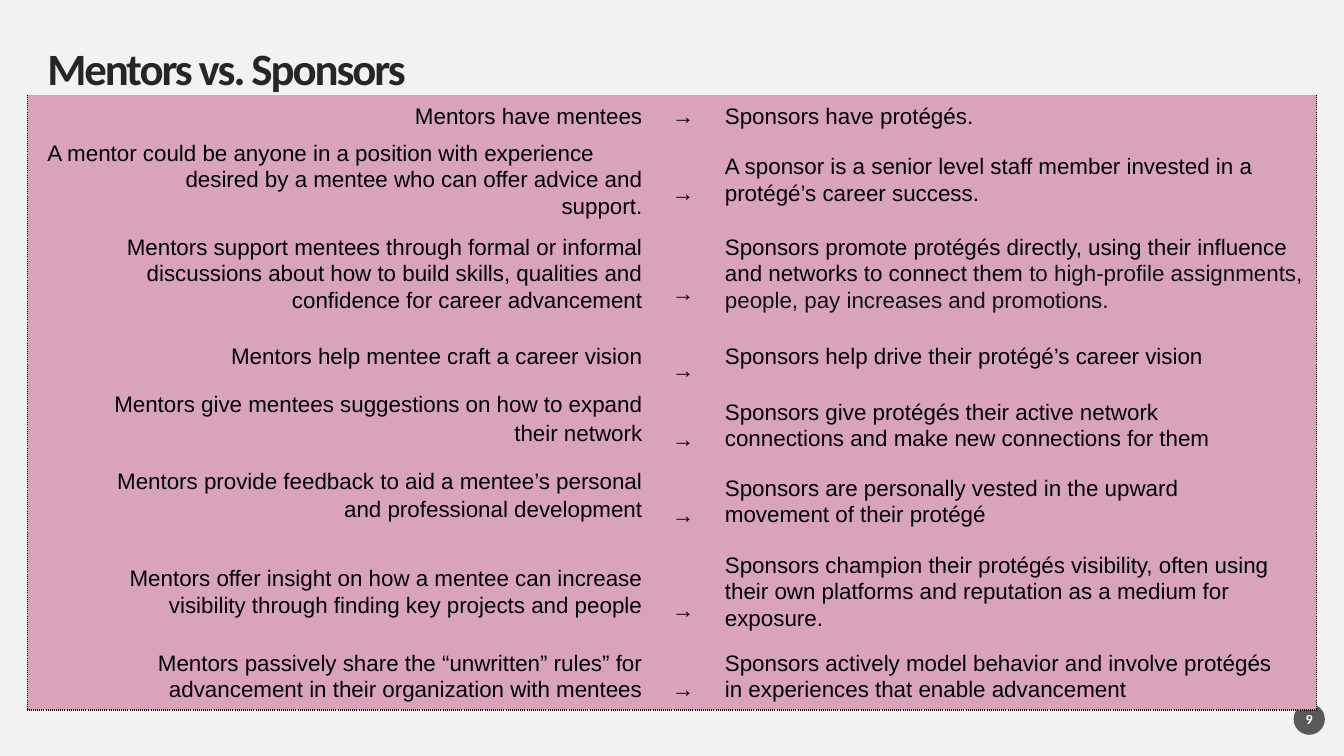
from dataclasses import dataclass

from lxml.etree import SubElement as Sub
from pptx import Presentation
from pptx.dml.color import RGBColor as Rgb
from pptx.enum.shapes import MSO_SHAPE as Shape
from pptx.enum.text import MSO_ANCHOR as Anchor, PP_ALIGN as Align
from pptx.oxml.ns import qn
from pptx.util import Inches, Pt


@dataclass(frozen=True)
class Theme:
    back: str = "F2F2F2"
    pink: str = "D9A4BB"
    ink: str = "000000"
    soft: str = "111111"
    head: str = "262626"
    badge: str = "595959"
    white: str = "FFFFFF"
    title: float = 32
    body: float = 16
    small: float = 10
    head_font: str = "Calibri"
    body_font: str = "Arial"


@dataclass(frozen=True)
class Run:
    text: str
    color: str = Theme.ink
    size: float = Theme.body
    font: str = Theme.body_font
    bold: bool = False
    track: float = 0


@dataclass(frozen=True)
class Para:
    runs: tuple[Run, ...]
    align: Align = Align.LEFT
    line: float | Pt = 1.07
    before: float = 0
    indent: float = 0


@dataclass(frozen=True)
class Pair:
    """One row: mentor text, sponsor text, and the insets that set the wraps."""
    height: float
    mentor: tuple[Para, ...]
    sponsor: tuple[Run, ...]
    drop: float = 0.27
    left: float = 0.6
    right: float = 0


THEME = Theme()
COLS = (6.18, 0.65, 5.96)
TIGHT = 10.3


def mentor(text: str, indent: float = 0) -> Para:
    return Para((Run(text),), Align.RIGHT, indent=indent)


def split(first: str, last: str) -> tuple[Para, ...]:
    """Two lines with exact spacing, one empty line height apart."""
    return (Para((Run(first),), Align.RIGHT, Pt(TIGHT)),
            Para((Run(last),), Align.RIGHT, Pt(TIGHT), TIGHT))


PAIRS = (
    Pair(0.41, (mentor("Mentors have mentees"),),
         (Run("Sponsors have protégés."),), drop=0),
    Pair(0.66, (
        Para((Run("A mentor could be anyone in a position with experience"),)),
        mentor("desired by a mentee who can offer advice and support.", 1)),
        (Run("A sponsor is a senior level staff member invested in a "
             "protégé’s career success."),), left=0.2),
    Pair(1.01, (mentor("Mentors support mentees through formal or informal "
                       "discussions about how to build skills, qualities and "
                       "confidence for career advancement"),),
         (Run("Sponsors promote protégés directly, using their influence and "
              "networks to connect them "),
          Run("to high-profile assignments, people, pay increases and "
              "promotions.", THEME.soft)), drop=0.39),
    Pair(0.64, (mentor("Mentors help mentee craft a career vision"),),
         (Run("Sponsors help drive their protégé’s career vision"),)),
    Pair(0.72, split("Mentors give mentees suggestions on how to expand",
                     "their network"),
         (Run("Sponsors give protégés their active network connections and "
              "make new connections for them"),), right=0.5),
    Pair(0.79, split("Mentors provide feedback to aid a mentee’s personal",
                     "and professional development"),
         (Run("Sponsors are personally vested in the upward movement of "
              "their protégé"),), right=0.5),
    Pair(1, (mentor("Mentors offer insight on how a mentee can increase "
                    "visibility through finding key projects and people"),),
         (Run("Sponsors champion their protégés visibility, often using "
              "their own platforms and reputation as a medium for "
              "exposure."),), drop=0.38),
    Pair(0.68, (mentor("Mentors passively share the “unwritten” rules” for "
                       "advancement in their organization with mentees"),),
         (Run("Sponsors actively model behavior and involve protégés in "
              "experiences that enable advancement"),), right=0.36),
)


def write(frame, paras: tuple[Para, ...]) -> None:
    for i, para in enumerate(paras):
        p = frame.add_paragraph() if i else frame.paragraphs[0]
        p.alignment, p.line_spacing = para.align, para.line
        if para.before:
            p.space_before = Pt(para.before)
        if para.indent:
            p._p.get_or_add_pPr().set("marL", str(Inches(para.indent)))
        for run in para.runs:
            r = p.add_run()
            r.text = run.text
            font = r.font
            font.size, font.name, font.bold = Pt(run.size), run.font, run.bold
            font.color.rgb = Rgb.from_string(run.color)
            if run.track:
                r._r.get_or_add_rPr().set("spc", str(int(run.track * 100)))


def label(shape, para: Para) -> None:
    """Fill a shape with one centred-in-height paragraph and no insets."""
    frame = shape.text_frame
    frame.word_wrap = True
    frame.vertical_anchor = Anchor.MIDDLE
    frame.margin_left = frame.margin_right = 0
    frame.margin_top = frame.margin_bottom = 0
    write(frame, (para,))


def edge(cell, sides: str) -> None:
    """Draw dotted borders on the named sides (L, R, T, B)."""
    props = cell._tc.get_or_add_tcPr()
    for side in sides:
        line = Sub(props, qn(f"a:ln{side}"), w=str(Pt(1)))
        fill = Sub(line, qn("a:solidFill"))
        Sub(fill, qn("a:srgbClr"), val=THEME.ink)
        Sub(line, qn("a:prstDash"), val="dot")


def fill_cell(cell, paras: tuple[Para, ...], sides: str,
              left: float = 0, right: float = 0, top: float = 0) -> None:
    edge(cell, sides)
    cell.fill.solid()
    cell.fill.fore_color.rgb = Rgb.from_string(THEME.pink)
    cell.vertical_anchor = Anchor.MIDDLE
    cell.margin_left, cell.margin_right = Inches(left), Inches(right)
    cell.margin_top, cell.margin_bottom = Inches(top), 0
    write(cell.text_frame, paras)


def add_pairs(slide) -> None:
    high = sum(pair.height for pair in PAIRS)
    table = slide.shapes.add_table(
        len(PAIRS), len(COLS), Inches(0.27), Inches(0.94),
        Inches(sum(COLS)), Inches(high)).table
    table.first_row = table.horz_banding = False
    style = table._tbl.tblPr.find(qn("a:tableStyleId"))
    style.text = "{2D5ABB26-0587-4C30-8999-92F81FD0307C}"
    for col, wide in zip(table.columns, COLS):
        col.width = Inches(wide)
    arrow = Para((Run("→"),), Align.CENTER)
    for i, pair in enumerate(PAIRS):
        table.rows[i].height = Inches(pair.height)
        base = "B" if i == len(PAIRS) - 1 else ""
        fill_cell(table.cell(i, 0), pair.mentor, "L" + base,
                  left=pair.left, right=0.08)
        fill_cell(table.cell(i, 1), (arrow,), base, top=pair.drop)
        fill_cell(table.cell(i, 2), (Para(pair.sponsor),), "R" + base,
                  left=0.09, right=pair.right)


def main() -> None:
    deck = Presentation()
    deck.slide_width, deck.slide_height = Inches(13.33), Inches(7.5)
    slide = deck.slides.add_slide(deck.slide_layouts[6])
    slide.background.fill.solid()
    slide.background.fill.fore_color.rgb = Rgb.from_string(THEME.back)

    title = slide.shapes.add_textbox(
        Inches(0.47), Inches(0.47), Inches(12.39), Inches(0.47))
    label(title, Para((Run("Mentors vs. Sponsors", THEME.head, THEME.title,
                           THEME.head_font, True, -1.5),), line=0.9))

    badge = slide.shapes.add_shape(
        Shape.OVAL, Inches(12.83), Inches(6.98), Inches(0.31), Inches(0.31))
    badge.shadow.inherit = False
    badge.fill.solid()
    badge.fill.fore_color.rgb = Rgb.from_string(THEME.badge)
    badge.line.fill.background()
    label(badge, Para((Run("9", THEME.white, THEME.small,
                           THEME.head_font, True),), Align.CENTER, 1.0))

    add_pairs(slide)
    deck.save("out.pptx")


if __name__ == "__main__":
    main()
